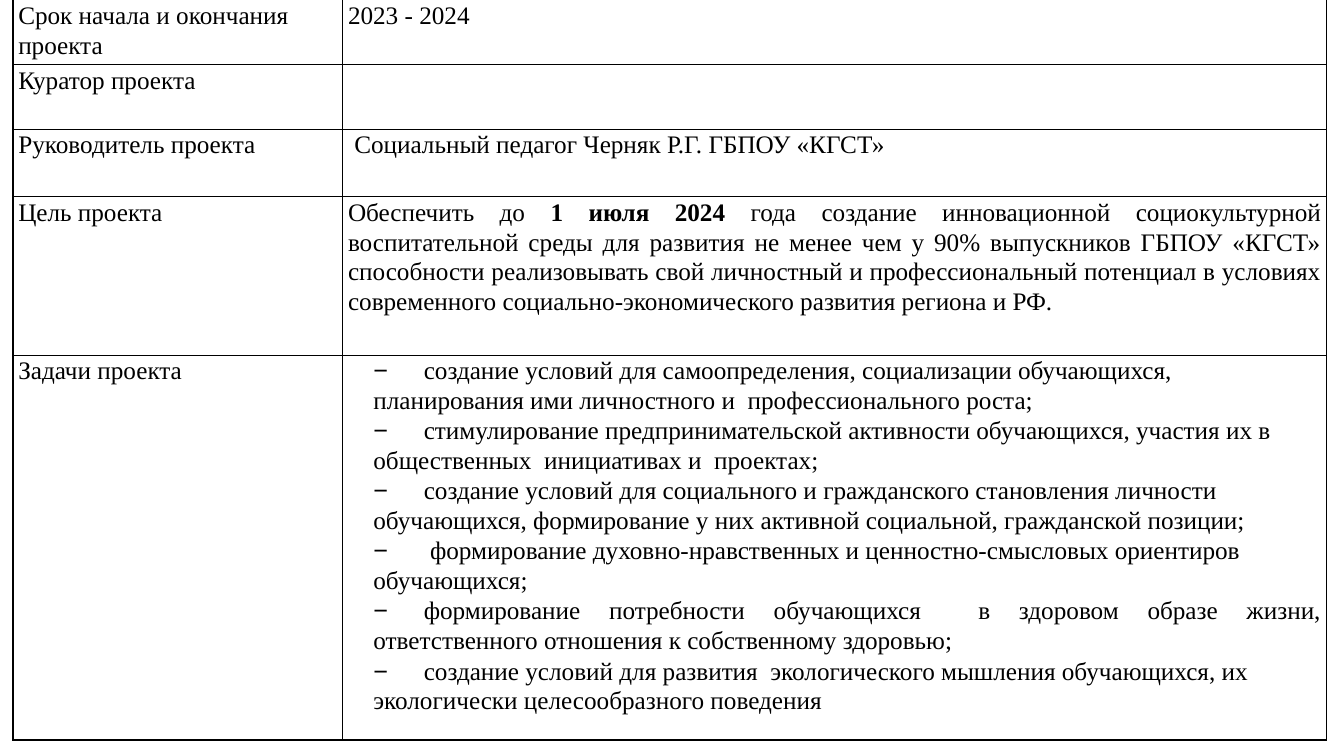
"""Build a slide with the project passport table."""
from lxml.etree import SubElement
from pptx import Presentation
from pptx.dml.color import RGBColor
from pptx.enum.text import PP_ALIGN as Align
from pptx.oxml.ns import qn
from pptx.util import Cm, Pt

BLACK = "000000"
BORDER = Pt(1)
DASH = "−"
COLUMNS = [8.31, 24.79]
HEIGHTS = [1.63, 1.63, 1.7, 3.99, 9.7]

TASKS = [
    "создание условий для самоопределения, социализации обучающихся, планирования ими личностного и  профессионального роста;",
    "стимулирование предпринимательской активности обучающихся, участия их в общественных  инициативах и  проектах;",
    "создание условий для социального и гражданского становления личности обучающихся, формирование у них активной социальной, гражданской позиции;",
    " формирование духовно-нравственных и ценностно-смысловых ориентиров обучающихся;",
    "формирование потребности обучающихся  в здоровом образе жизни, ответственного отношения к собственному здоровью;",
    "создание условий для развития  экологического мышления обучающихся, их экологически целесообразного поведения",
]
JUSTIFIED_TASK = 4

GOAL = [
    ("Обеспечить до ", False),
    ("1 июля 2024 ", True),
    ("года создание инновационной социокультурной воспитательной среды для развития не менее чем у 90% выпускников ГБПОУ «КГСТ» способности реализовывать свой личностный и профессиональный потенциал в условиях современного социально-экономического развития региона и РФ.", False),
]

ROWS = [
    ("Срок начала и окончания проекта", [("2023 - 2024", False)]),
    ("Куратор проекта", []),
    ("Руководитель проекта", [(" Социальный педагог Черняк Р.Г. ГБПОУ «КГСТ»", False)]),
    ("Цель проекта", GOAL),
    ("Задачи проекта", []),
]


def add_span(para, text, font="Times New Roman", size=18, bold=False, color=BLACK):
    span = para.add_run()
    span.text = text
    span.font.name = font
    span.font.size = Pt(size)
    span.font.bold = bold
    span.font.color.rgb = RGBColor.from_string(color)


def format_cell(cell, sides, color=BLACK):
    cell.margin_left = cell.margin_right = Cm(0.13)
    cell.margin_top = cell.margin_bottom = 0
    props = cell._tc.get_or_add_tcPr()
    for side in sides:
        line = SubElement(props, qn(f"a:ln{side}"), w=str(BORDER))
        fill = SubElement(line, qn("a:solidFill"))
        SubElement(fill, qn("a:srgbClr"), val=color)
    cell.fill.background()


deck = Presentation()
deck.slide_width, deck.slide_height = Cm(33.87), Cm(19.05)
page = deck.slides.add_slide(deck.slide_layouts[6])

frame = page.shapes.add_table(
    len(ROWS), len(COLUMNS), Cm(0.33), 0, Cm(sum(COLUMNS)), Cm(sum(HEIGHTS)))
table = frame.table
table.first_row = table.horz_banding = False
for column, width in zip(table.columns, COLUMNS):
    column.width = Cm(width)

for index, (label, spans) in enumerate(ROWS):
    table.rows[index].height = Cm(HEIGHTS[index])
    label_cell, value_cell = table.rows[index].cells
    for cell in (label_cell, value_cell):
        format_cell(cell, "LRTB" if index else "LRB")
        cell.text_frame.paragraphs[0].line_spacing = 1.07
    add_span(label_cell.text_frame.paragraphs[0], label)
    value_para = value_cell.text_frame.paragraphs[0]
    value_para.alignment = Align.JUSTIFY
    value_para.font.size = Pt(18)
    for text, bold in spans:
        add_span(value_para, text, bold=bold)

task_frame = table.cell(len(ROWS) - 1, 1).text_frame
for index, task in enumerate(TASKS):
    para = task_frame.add_paragraph() if index else task_frame.paragraphs[0]
    para.line_spacing = 1.07
    para.alignment = Align.JUSTIFY if index == JUSTIFIED_TASK else Align.LEFT
    props = para._p.get_or_add_pPr()
    props.set("marL", str(Cm(0.64)))
    props.set("indent", "0")
    for old_default in props.findall(qn("a:defRPr")):
        props.remove(old_default)
    SubElement(props, qn("a:buNone"))
    tabs = SubElement(props, qn("a:tabLst"))
    SubElement(tabs, qn("a:tab"), pos=str(Cm(1.48)), algn="l")
    add_span(para, DASH, font="Arial")
    add_span(para, "\t" + task)

deck.save("out.pptx")
